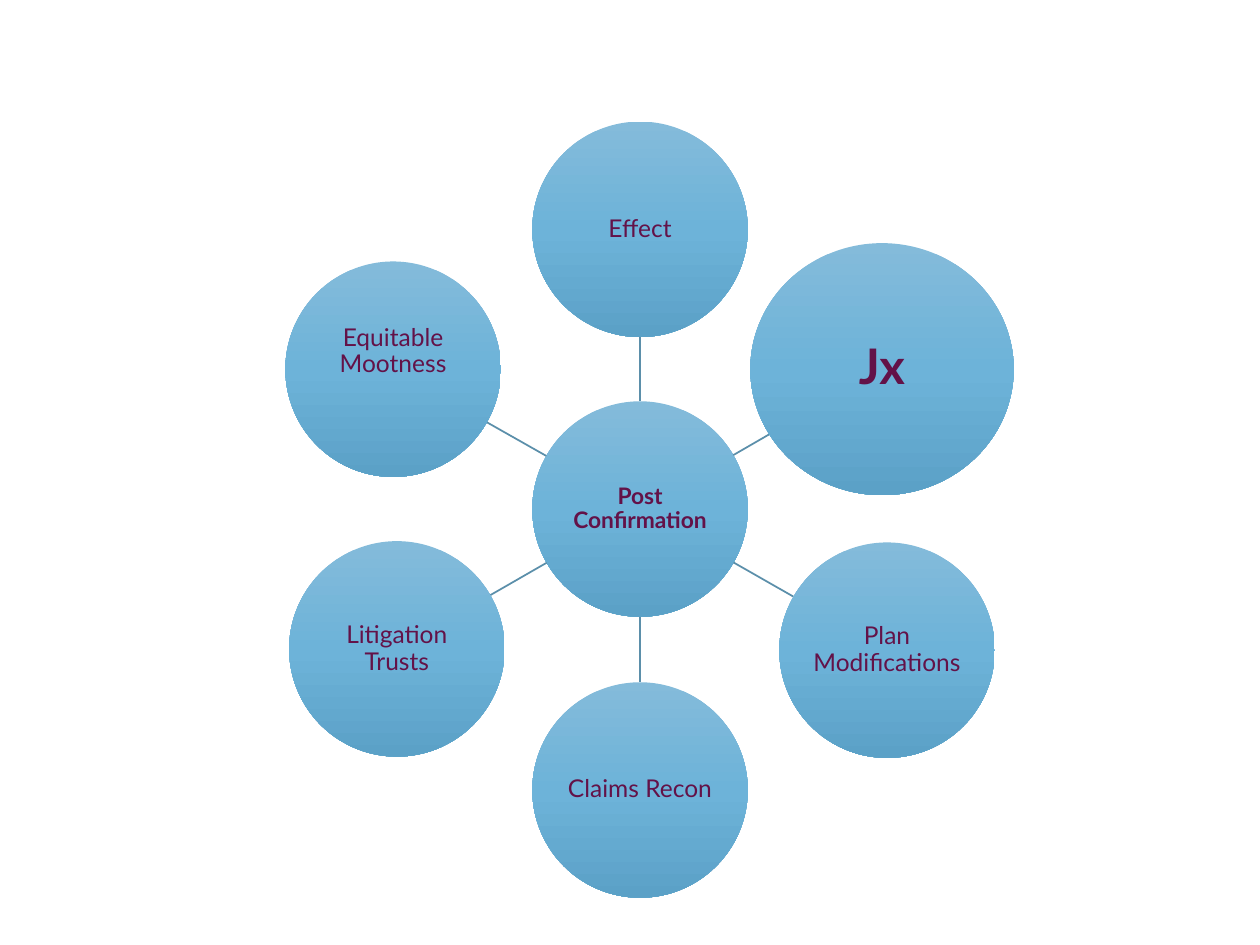
"""Build a hub-and-spoke slide of post-confirmation topics."""
from copy import deepcopy
from math import hypot

from lxml.etree import SubElement
from pptx import Presentation
from pptx.dml.color import RGBColor
from pptx.enum.shapes import MSO_CONNECTOR as Connector, MSO_SHAPE as Shape
from pptx.enum.text import MSO_ANCHOR as Anchor, PP_ALIGN as Align
from pptx.oxml.ns import qn
from pptx.util import Inches, Pt

PLUM = RGBColor(0x63, 0x12, 0x48)
SPOKE_BLUE = RGBColor(0x5B, 0x8F, 0xAA)
GRADIENT = [
    (0, RGBColor(0x84, 0xBB, 0xDA)),
    (0.5, RGBColor(0x6D, 0xB3, 0xD9)),
    (1, RGBColor(0x5B, 0xA1, 0xC7)),
]
DIAMETER = 1.71
HUB_X, HUB_Y = 5.08, 4.04


def add_circle(label, x, y, width=DIAMETER, height=DIAMETER, size=14, bold=False, lift=0):
    circle = slide.shapes.add_shape(
        Shape.OVAL, Inches(x - width / 2), Inches(y - height / 2), Inches(width), Inches(height)
    )
    circle.shadow.inherit = False
    circle.line.fill.background()
    circle.fill.gradient()
    circle.fill.gradient_angle = 270
    stop_list = circle._element.spPr.find(".//" + qn("a:gsLst"))
    stop_list.insert(1, deepcopy(stop_list[0]))
    for stop, (position, color) in zip(circle.fill.gradient_stops, GRADIENT):
        stop.position = position
        stop.color.rgb = color

    frame = circle.text_frame
    frame_format = {
        "word_wrap": True,
        "vertical_anchor": Anchor.MIDDLE,
        "margin_left": Inches(0.01),
        "margin_right": Inches(0.01),
        "margin_top": Inches(0.01),
        "margin_bottom": Inches(0.01 + 2 * lift),
    }
    for name, value in frame_format.items():
        setattr(frame, name, value)
    frame.text = label
    paragraph = frame.paragraphs[0]
    paragraph.alignment = Align.CENTER
    paragraph.line_spacing = 0.9
    font = paragraph.runs[0].font
    for name, value in {"name": "Lato", "size": Pt(size), "bold": bold}.items():
        setattr(font, name, value)
    font.color.rgb = PLUM


def add_spoke(x, y, width=DIAMETER, height=DIAMETER):
    dx, dy = x - HUB_X, y - HUB_Y
    start = DIAMETER / 2 / hypot(dx, dy)
    end = 1 - 1 / hypot(dx / (width / 2), dy / (height / 2))
    spoke = slide.shapes.add_connector(
        Connector.STRAIGHT,
        Inches(HUB_X + start * dx), Inches(HUB_Y + start * dy),
        Inches(HUB_X + end * dx), Inches(HUB_Y + end * dy),
    )
    spoke.line.color.rgb = SPOKE_BLUE
    spoke.line.width = Pt(1)
    SubElement(spoke._element.spPr, qn("a:effectLst"))


prs = Presentation()
prs.slide_width, prs.slide_height = Inches(10), Inches(7.5)
slide = prs.slides.add_slide(prs.slide_layouts[6])

topics = [
    ("Effect", (HUB_X, 1.82), {}, {}),
    ("Jx", (7, 2.93), {"width": 2.09, "height": 2}, {"size": 28, "bold": True}),
    ("Plan Modifications", (7.04, 5.16), {}, {}),
    ("Claims Recon", (HUB_X, 6.27), {}, {}),
    ("Litigation Trusts", (3.15, 5.15), {}, {}),
    ("Equitable Mootness", (3.12, 2.93), {}, {"lift": 0.14}),
]
add_circle("Post Confirmation", HUB_X, HUB_Y, size=13, bold=True)
for label, center, extent, text_format in topics:
    add_spoke(*center, **extent)
    add_circle(label, *center, **extent, **text_format)

prs.save("out.pptx")
